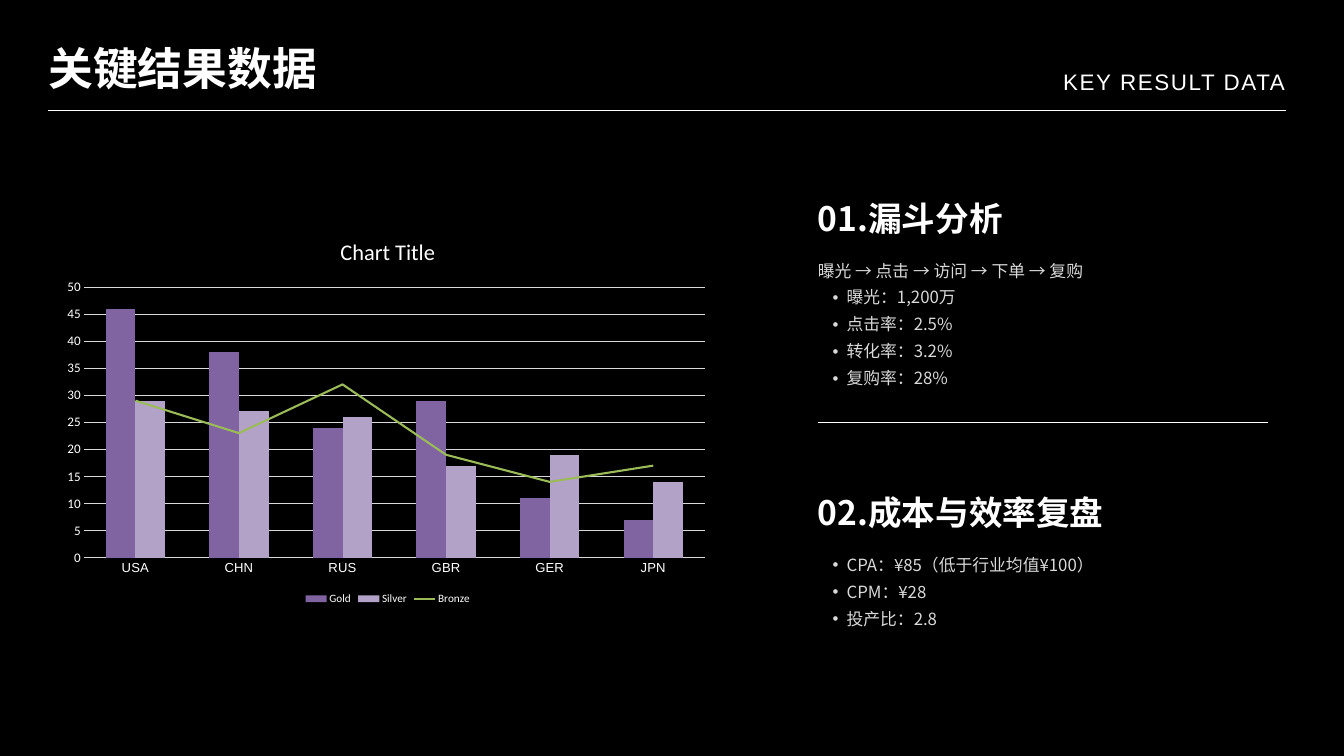
"""Build the key result data slide with a combined chart and two review sections."""
from dataclasses import dataclass

from lxml.etree import SubElement
from pptx import Presentation
from pptx.chart.data import CategoryChartData
from pptx.dml.color import RGBColor
from pptx.enum.chart import XL_CHART_TYPE, XL_LEGEND_POSITION, XL_TICK_MARK
from pptx.enum.text import MSO_AUTO_SIZE, PP_ALIGN
from pptx.oxml import parse_xml
from pptx.oxml.ns import nsdecls, qn
from pptx.util import Cm, Pt

COLORS = {
    "black": "000000", "white": "FFFFFF", "grey": "D9D9D9",
    "gold": "8064A2", "silver": "B3A2C7", "bronze": "9BBB59",
}
CJK = "Noto Sans CJK SC"
LEFT, RIGHT, COLUMN = 1.83, 48.59, 30.91


@dataclass(frozen=True)
class Style:
    size: float
    leading: float
    color: str = "white"
    font: str = CJK
    bold: bool = False
    spacing: float = 0
    align: PP_ALIGN = PP_ALIGN.LEFT


@dataclass(frozen=True)
class Line:
    text: str
    bullet: bool = True


@dataclass(frozen=True)
class Section:
    top: float
    heading: str
    body_height: float
    lines: tuple[Line, ...]


TITLE = Style(48, 67.2, bold=True)
SUBTITLE = Style(24, 33.6, font="Arial", spacing=1.7, align=PP_ALIGN.RIGHT)
HEADING = Style(36, 56.9, bold=True)
BODY = Style(18, 28.9, color="grey")

SECTIONS = (
    Section(6.99, "01.漏斗分析", 6.12, (
        Line("曝光 → 点击 → 访问 → 下单 → 复购", bullet=False),
        Line("曝光：1,200万"),
        Line("点击率：2.5%"),
        Line("转化率：3.2%"),
        Line("复购率：28%"),
    )),
    Section(18.11, "02.成本与效率复盘", 4.06, (
        Line("CPA：¥85（低于行业均值¥100）"),
        Line("CPM：¥28"),
        Line("投产比：2.8"),
    )),
)
COUNTRIES = ("USA", "CHN", "RUS", "GBR", "GER", "JPN")
MEDALS = {
    "Gold": (46, 38, 24, 29, 11, 7),
    "Silver": (29, 27, 26, 17, 19, 14),
    "Bronze": (29, 23, 32, 19, 14, 17),
}


def rgb(name: str) -> RGBColor:
    """Return a named colour."""
    return RGBColor.from_string(COLORS[name])


def add_text(s, x: float, y: float, w: float, h: float,
             lines: tuple[Line, ...], style: Style) -> None:
    """Add a text box with one paragraph per line."""
    tf = s.shapes.add_textbox(Cm(x), Cm(y), Cm(w), Cm(h)).text_frame
    tf.word_wrap = True
    tf.auto_size = MSO_AUTO_SIZE.SHAPE_TO_FIT_TEXT
    tf.margin_left = tf.margin_top = tf.margin_right = tf.margin_bottom = 0
    for i, line in enumerate(lines):
        p = tf.paragraphs[0] if i == 0 else tf.add_paragraph()
        p.alignment = style.align
        p.line_spacing = Pt(style.leading)
        if line.bullet:
            p.level = 1
            pPr = p._p.get_or_add_pPr()
            pPr.set("marL", str(Cm(1.09)))
            pPr.set("indent", str(-Cm(0.53)))
            SubElement(pPr, qn("a:buFont"), typeface="Arial")
            SubElement(pPr, qn("a:buChar"), char="•")
        r = p.add_run()
        r.text = line.text
        r.font.size = Pt(style.size)
        r.font.bold = style.bold
        r.font.name = style.font
        r.font.color.rgb = rgb(style.color)
        rPr = r._r.get_or_add_rPr()
        SubElement(rPr, qn("a:ea"), typeface=style.font)
        if style.spacing:
            rPr.set("spc", str(round(style.spacing * 100)))


def add_rule(s, x1: float, x2: float, y: float) -> None:
    """Add a thin horizontal white line."""
    sp = s.shapes.add_connector(1, Cm(x1), Cm(y), Cm(x2), Cm(y))
    sp.line.color.rgb = rgb("white")
    sp.line.width = Pt(0.75)
    SubElement(sp._element.spPr, qn("a:effectLst"))


def set_font(font, size: float, name: str = "Calibri") -> None:
    """Give a chart part its white font."""
    font.size = Pt(size)
    font.name = name
    font.bold = False
    font.color.rgb = rgb("white")


def move_to_line_plot(chart, index: int) -> None:
    """Move one bar series to a line plot on the same axes."""
    bar = chart.plots[0]._element
    ser = bar.findall(qn("c:ser"))[index]
    for flag in ser.findall(qn("c:invertIfNegative")):
        ser.remove(flag)
    plot = parse_xml(
        f'<c:lineChart {nsdecls("c")}><c:grouping val="standard"/>'
        '<c:varyColors val="0"/><c:marker val="1"/></c:lineChart>')
    plot.insert(2, ser)
    ser.find(qn("c:spPr")).addnext(parse_xml(
        f'<c:marker {nsdecls("c")}><c:symbol val="none"/></c:marker>'))
    for old in ser.findall(qn("c:smooth")):
        ser.remove(old)
    SubElement(ser, qn("c:smooth"), val="0")
    for axis in bar.findall(qn("c:axId")):
        SubElement(plot, qn("c:axId"), val=str(axis.get("val")))
    bar.addnext(plot)


def set_plot_area(chart, x: float, y: float, w: float, h: float) -> None:
    """Place the inner plot area by fractions of the chart."""
    area = chart._chartSpace.chart.plotArea
    for old in area.findall(qn("c:layout")):
        area.remove(old)
    layout = SubElement(area, qn("c:layout"))
    area.insert(0, layout)
    manual = SubElement(layout, qn("c:manualLayout"))
    values = {"layoutTarget": "inner", "xMode": "edge", "yMode": "edge",
              "x": x, "y": y, "w": w, "h": h}
    for tag, value in values.items():
        SubElement(manual, qn(f"c:{tag}"), val=str(value))


def add_medal_chart(s) -> None:
    """Add the columns of gold and silver with the bronze line."""
    data = CategoryChartData()
    data.categories = COUNTRIES
    for name, values in MEDALS.items():
        data.add_series(name, values)
    chart = s.shapes.add_chart(XL_CHART_TYPE.COLUMN_CLUSTERED, Cm(2.16), Cm(8.36),
                               Cm(24.99), Cm(14.63), data).chart
    set_font(chart.font, 10)
    chart.has_title = True
    r = chart.chart_title.text_frame.paragraphs[0].add_run()
    r.text = "Chart Title"
    set_font(r.font, 24)
    chart.has_legend = True
    chart.legend.position = XL_LEGEND_POSITION.BOTTOM
    chart.legend.include_in_layout = False
    set_font(chart.legend.font, 12)
    cat, val = chart.category_axis, chart.value_axis
    for axis, font in ((cat, "Arial"), (val, "Calibri")):
        axis.major_tick_mark = axis.minor_tick_mark = XL_TICK_MARK.NONE
        set_font(axis.tick_labels.font, 14, font)
    val.minimum_scale, val.maximum_scale, val.major_unit = 0, 50, 5
    val.format.line.fill.background()
    for line in (cat.format.line, val.major_gridlines.format.line):
        line.color.rgb = rgb("grey")
        line.width = Pt(0.75)
    plot = chart.plots[0]
    plot.gap_width, plot.overlap, plot.vary_by_categories = 150, 0, False
    gold, silver, bronze = plot.series
    for series in (gold, silver):
        series.format.fill.solid()
        series.format.fill.fore_color.rgb = rgb(series.name.lower())
    bronze.format.line.color.rgb = rgb("bronze")
    bronze.format.line.width = Pt(2.25)
    move_to_line_plot(chart, 2)
    set_plot_area(chart, 0.04, 0.17, 0.94, 0.7)


prs = Presentation()
prs.slide_width, prs.slide_height = Cm(50.8), Cm(28.58)
s = prs.slides.add_slide(prs.slide_layouts[6])
s.background.fill.solid()
s.background.fill.fore_color.rgb = rgb("black")
add_rule(s, LEFT, RIGHT, 4.17)
add_text(s, LEFT, 1.19, 18.77, 2.36, (Line("关键结果数据", False),), TITLE)
add_text(s, 20.6, 2.39, 27.97, 1.14, (Line("KEY RESULT DATA", False),), SUBTITLE)
for sec in SECTIONS:
    add_text(s, COLUMN, sec.top, 15.93, 2.01, (Line(sec.heading, False),), HEADING)
    add_text(s, COLUMN, sec.top + 2.59, 17.04, sec.body_height, sec.lines, BODY)
add_rule(s, COLUMN, 47.93, 15.95)
add_medal_chart(s)
prs.save("out.pptx")
